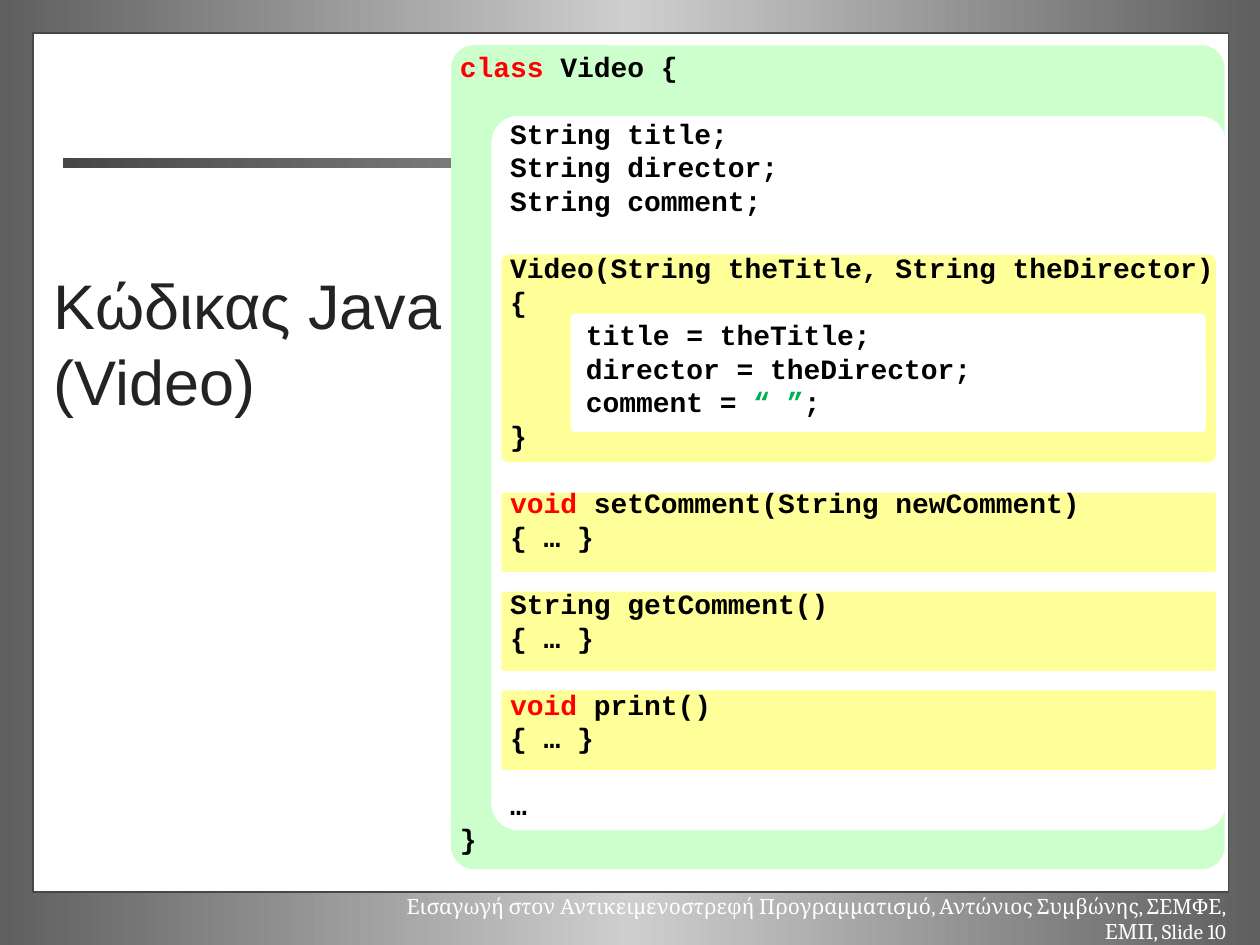
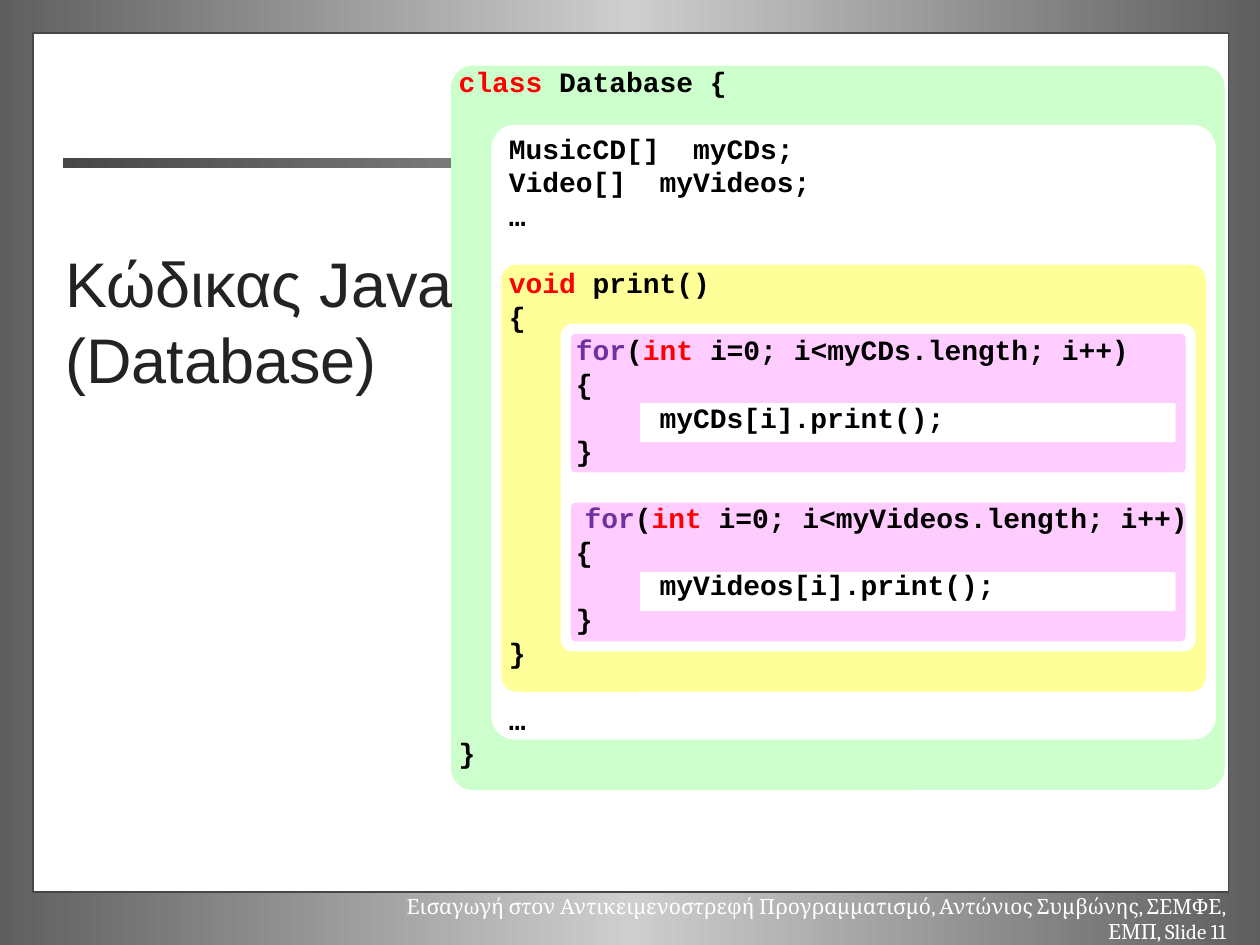
from copy import deepcopy
from dataclasses import dataclass
from typing import NamedTuple

from pptx import Presentation
from pptx.dml.color import RGBColor
from pptx.dml.fill import FillFormat
from pptx.enum.shapes import MSO_SHAPE
from pptx.enum.text import MSO_ANCHOR, PP_ALIGN
from pptx.oxml.ns import qn
from pptx.oxml.xmlchemy import BaseOxmlElement
from pptx.presentation import Presentation as Deck
from pptx.shapes.autoshape import Shape
from pptx.slide import Slide
from pptx.util import Inches, Pt


@dataclass(frozen=True)
class Theme:
    """Colours, fonts and type sizes that the slides share."""

    edge: str = "5F5F5F"
    glow: str = "CECECE"
    dark: str = "474747"
    pale: str = "DCDCDC"
    white: str = "FFFFFF"
    title: str = "232323"
    class_block: str = "CCFFCC"
    method_block: str = "FFFF99"
    loop_block: str = "FFCCFF"
    code: str = "000000"
    keyword: str = "FF0000"
    loop_keyword: str = "7030A0"
    string: str = "00B050"
    title_font: str = "Arial"
    footer_font: str = "Cambria"
    code_font: str = "Courier New"
    title_size: float = 36
    footer_size: float = 12
    code_size: float = 16
    line_height: float = 1.2


THEME = Theme()
CHARACTER = 0.133
MEMBER = 3 * CHARACTER
BODY = 7 * CHARACTER
LOOP_BODY = 12 * CHARACTER
TAB = 1.0
FOOTER = "Εισαγωγή στον Αντικειμενοστρεφή Προγραμματισμό, Αντώνιος Συμβώνης, ΣΕΜΦΕ, ΕΜΠ, Slide "


class Box(NamedTuple):
    """A place in inches."""

    left: float
    top: float
    width: float
    height: float


class Block(NamedTuple):
    """A rounded panel behind part of the code."""

    box: Box
    color: str
    rounding: float = 0.035


class Span(NamedTuple):
    """A piece of text, coloured when it differs from its line."""

    text: str
    color: str | None = None


class Line(NamedTuple):
    """A paragraph with its indent and an optional empty line above it."""

    spans: tuple[Span, ...]
    indent: float = 0
    gap: bool = False


class CodeSlide(NamedTuple):
    """One slide of code with its panels."""

    number: int
    title: str
    title_box: Box
    code_box: Box
    blocks: list[Block]
    lines: list[Line]


def line(*pieces: str | Span, indent: float = 0, gap: bool = False) -> Line:
    """Build a line from plain strings and coloured spans."""
    spans = tuple(piece if isinstance(piece, Span) else Span(piece) for piece in pieces)
    return Line(spans, indent, gap)


def keyword(text: str) -> Span:
    """Colour a type or declaration keyword."""
    return Span(text, THEME.keyword)


def method(*signature: str | Span) -> list[Line]:
    """List a method whose body is left out."""
    return [line(*signature, indent=MEMBER, gap=True), line("{ … }", indent=MEMBER)]


def loop(array: str, indent: float, gap: bool = False) -> list[Line]:
    """List a loop that prints every element of an array."""
    return [
        line(Span("for", THEME.loop_keyword), "(", keyword("int "),
             f"i=0; i<{array}.length; i++)", indent=indent, gap=gap),
        line("{", indent=BODY),
        line(f"{array}[i].print();", indent=LOOP_BODY),
        line("}", indent=BODY),
    ]


def ending() -> list[Line]:
    """List the lines that close a class."""
    return [line("…", indent=MEMBER, gap=True), line("}")]


def place(box: Box) -> tuple[Inches, ...]:
    """Turn a box into slide lengths."""
    return tuple(Inches(value) for value in box)


def paint_gradient(fill: FillFormat, element: BaseOxmlElement, colors: list[str]) -> None:
    """Fill from left to right with evenly spaced colours."""
    fill.gradient()
    fill.gradient_angle = 0
    stops = element.find(".//" + qn("a:gsLst"))
    for _ in range(len(colors) - len(stops)):
        stops.append(deepcopy(stops[-1]))
    for index, (stop, color) in enumerate(zip(fill.gradient_stops, colors)):
        stop.position = index / (len(colors) - 1)
        stop.color.rgb = RGBColor.from_string(color)


def add_panel(slide: Slide, block: Block, rounded: bool = True) -> Shape:
    """Add a flat filled panel without an outline."""
    kind = MSO_SHAPE.ROUNDED_RECTANGLE if rounded else MSO_SHAPE.RECTANGLE
    shape = slide.shapes.add_shape(kind, *place(block.box))
    shape.shadow.inherit = False
    shape.fill.solid()
    shape.fill.fore_color.rgb = RGBColor.from_string(block.color)
    shape.line.fill.background()
    if rounded:
        shape.adjustments[0] = block.rounding
    return shape


def add_text(slide: Slide, lines: list[Line], box: Box, *, font: str, size: float,
             color: str, bold: bool = False, wrap: bool = True,
             align: PP_ALIGN = PP_ALIGN.LEFT, anchor: MSO_ANCHOR = MSO_ANCHOR.TOP,
             inset: tuple[float, float] = (0.1, 0.05)) -> None:
    """Add formatted lines of text in a box."""
    frame = slide.shapes.add_textbox(*place(box)).text_frame
    frame.word_wrap = wrap
    frame.vertical_anchor = anchor
    frame.margin_left = frame.margin_right = Inches(inset[0])
    frame.margin_top = frame.margin_bottom = Inches(inset[1])
    height = Pt(size * THEME.line_height)
    for index, item in enumerate(lines):
        paragraph = frame.add_paragraph() if index else frame.paragraphs[0]
        paragraph.alignment = align
        paragraph.line_spacing = height
        paragraph.space_before = height if item.gap else Pt(0)
        properties = paragraph._p.get_or_add_pPr()
        properties.set("marL", str(Inches(item.indent)))
        properties.set("indent", "0")
        for span in item.spans:
            run = paragraph.add_run()
            run.text = span.text
            run.font.name = font
            run.font.size = Pt(size)
            run.font.bold = bold
            run.font.color.rgb = RGBColor.from_string(span.color or color)


def add_frame(slide: Slide, number: int) -> None:
    """Draw the background, page, footer and title bar."""
    paint_gradient(slide.background.fill, slide.element, [THEME.edge, THEME.glow, THEME.edge])
    page = add_panel(slide, Block(Box(0.26, 0.26, 9.49, 6.82), THEME.white), rounded=False)
    page.line.color.rgb = RGBColor.from_string(THEME.dark)
    page.line.width = Pt(1)
    add_text(slide, [line(f"{FOOTER}{number}")], Box(3.03, 7.04, 6.8, 0.45),
             font=THEME.footer_font, size=THEME.footer_size, color=THEME.white,
             align=PP_ALIGN.RIGHT)
    bar = add_panel(slide, Block(Box(0.5, 1.25, 9, 0.08), THEME.dark), rounded=False)
    paint_gradient(bar.fill, bar._element, [THEME.dark, THEME.pale])


def add_code_slide(presentation: Deck, content: CodeSlide) -> None:
    """Add one slide with its panels, title and code."""
    slide = presentation.slides.add_slide(presentation.slide_layouts[6])
    add_frame(slide, content.number)
    for block in content.blocks:
        add_panel(slide, block)
    add_text(slide, [line(content.title)], content.title_box, font=THEME.title_font,
             size=THEME.title_size, color=THEME.title, anchor=MSO_ANCHOR.MIDDLE)
    add_text(slide, content.lines, content.code_box, font=THEME.code_font,
             size=THEME.code_size, color=THEME.code, bold=True, wrap=False, inset=(0, 0))


VIDEO = CodeSlide(
    number=10,
    title="Κώδικας Java (Video)",
    title_box=Box(0.33, 2.05, 4.25, 1.33),
    code_box=Box(3.65, 0.39, 6.1, 6.4),
    blocks=[
        Block(Box(3.58, 0.36, 6.14, 6.54), THEME.class_block, 0.03),
        Block(Box(3.9, 0.92, 5.83, 5.67), THEME.white, 0.038),
        Block(Box(3.98, 2.02, 5.67, 1.65), THEME.method_block),
        *(Block(Box(3.98, 3.91 + 0.785 * row, 5.67, 0.63), THEME.method_block)
          for row in range(3)),
        Block(Box(4.53, 2.49, 5.04, 0.94), THEME.white, 0.037),
    ],
    lines=[
        line(keyword("class"), " Video {"),
        line("String title;", indent=MEMBER, gap=True),
        line("String director;", indent=MEMBER),
        line("String comment;", indent=MEMBER),
        line("Video(String theTitle, String theDirector)", indent=MEMBER, gap=True),
        line("{", indent=MEMBER),
        line("title = theTitle;", indent=TAB),
        line("director = theDirector;", indent=TAB),
        line("comment = ", Span("“ ”", THEME.string), ";", indent=TAB),
        line("}", indent=MEMBER),
        *method(keyword("void "), "setComment(String newComment)"),
        *method("String getComment()"),
        *method(keyword("void"), " print()"),
        *ending(),
    ],
)

DATABASE = CodeSlide(
    number=11,
    title="Κώδικας Java (Database)",
    title_box=Box(0.42, 1.58, 3.58, 1.92),
    code_box=Box(3.64, 0.51, 6.1, 5.6),
    blocks=[
        Block(Box(3.58, 0.52, 6.14, 5.75), THEME.class_block, 0.03),
        Block(Box(3.9, 0.99, 5.75, 4.88), THEME.white, 0.038),
        Block(Box(3.98, 2.1, 5.59, 3.39), THEME.method_block),
        Block(Box(4.45, 2.57, 5.04, 2.6), THEME.white, 0.037),
        *(Block(Box(4.53, top, 4.88, 1.1), THEME.loop_block) for top in (3.99, 2.65)),
        *(Block(Box(5.08, top, 4.25, 0.31), THEME.white) for top in (3.2, 4.54)),
    ],
    lines=[
        line(keyword("class"), " Database {"),
        line("MusicCD[]  myCDs;", indent=MEMBER, gap=True),
        line("Video[]  myVideos;", indent=MEMBER),
        line("…", indent=MEMBER),
        line(keyword("void"), " print()", indent=MEMBER, gap=True),
        line("{", indent=MEMBER),
        *loop("myCDs", BODY),
        *loop("myVideos", TAB, gap=True),
        line("}", indent=MEMBER),
        *ending(),
    ],
)


def main() -> None:
    """Build and save the presentation."""
    presentation = Presentation()
    presentation.slide_width = Inches(10)
    presentation.slide_height = Inches(7.5)
    for content in (VIDEO, DATABASE):
        add_code_slide(presentation, content)
    presentation.save("out.pptx")


if __name__ == "__main__":
    main()
